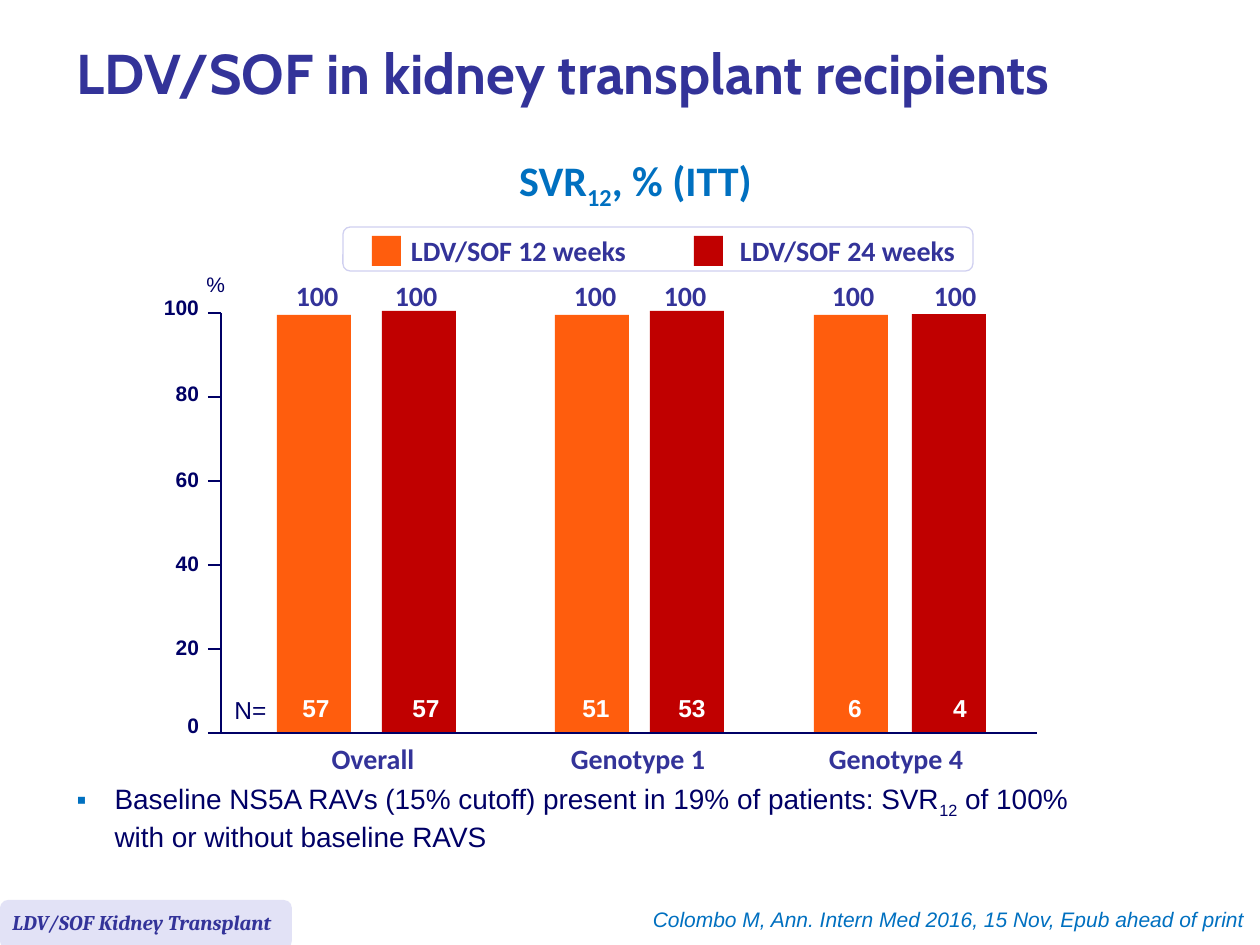
"""Build the slide on LDV/SOF response rates in kidney transplant recipients."""
import lxml.etree
import pptx
import pptx.dml.color
import pptx.enum.shapes
import pptx.enum.text
import pptx.oxml.ns
import pptx.util

COLORS = {
    "navy": "000066", "indigo": "333399", "blue": "0070C0", "white": "FFFFFF",
    "weeks12": "FF5D0D", "weeks24": "C00000", "tab": "E2E2F6", "frame": "D0D0F0",
}
TITLE = "LDV/SOF in kidney transplant recipients"
HEADING = ["SVR", "12", ", % (ITT)"]
FINDING = ["Baseline NS5A RAVs (15% cutoff) present in 19% of patients: SVR", "12", " of 100%"]
FINDING_END = "with or without baseline RAVS"
TAB = "LDV/SOF Kidney Transplant"
CITATION = "Colombo M, Ann. Intern Med 2016, 15 Nov, Epub ahead of print"
LEGEND = [("LDV/SOF 12 weeks", "weeks12", 372, 397), ("LDV/SOF 24 weeks", "weeks24", 694, 726)]
AXIS_LABELS = [("0", 713), ("20", 635), ("40", 551), ("60", 467), ("80", 381), ("100", 295)]
GROUPS = [("Overall", 373), ("Genotype 1", 638), ("Genotype 4", 896)]
# rate, patients, color, bar left, bar top, rate center, patients center
BARS = [
    ("100", "57", "weeks12", 277, 315, 317, 316),
    ("100", "57", "weeks24", 382, 311, 416, 426),
    ("100", "51", "weeks12", 555, 315, 595, 596),
    ("100", "53", "weeks24", 650, 311, 685, 692),
    ("100", "6", "weeks12", 814, 315, 853, 855),
    ("100", "4", "weeks24", 912, 314, 955, 960),
]
BASE, TICK_GAP, BAR_WIDTH = 733, 84, 74
AXIS, TICK_LEFT, AXIS_END = 221, 208, 1037

ALIGN = pptx.enum.text.PP_ALIGN
SHAPE = pptx.enum.shapes.MSO_SHAPE


def px(length):
    return pptx.util.Emu(round(length * 914400 / 126))


def rgb(name):
    return pptx.dml.color.RGBColor.from_string(COLORS[name])


def style(paragraph, size, font, color, bold=False, italic=False, align=ALIGN.LEFT):
    paragraph.alignment = align
    paragraph.font.size = pptx.util.Pt(size)
    paragraph.font.name = font
    paragraph.font.bold = bold
    paragraph.font.italic = italic
    paragraph.font.color.rgb = rgb(color)


def add_subscripted(paragraph, parts):
    for part, baseline in zip(parts, (None, "-25000", None)):
        run = paragraph.add_run()
        run.text = part
        if baseline:
            run.font._element.set("baseline", baseline)


def place(shape, box):
    shape.left, shape.top, shape.width, shape.height = map(px, box)


def add_label(slide, text, box, *look, inset=True, wrap=False, leading=None, **options):
    frame = slide.shapes.add_textbox(*map(px, box)).text_frame
    frame.word_wrap = wrap
    if not inset:
        frame.margin_left = frame.margin_right = frame.margin_top = frame.margin_bottom = 0
    paragraph = frame.paragraphs[0]
    if isinstance(text, list):
        add_subscripted(paragraph, text)
    else:
        paragraph.text = text
    if leading:
        paragraph.line_spacing = pptx.util.Pt(leading)
    style(paragraph, *look, **options)


def add_centered(slide, text, center, top, width, height, *look, **options):
    box = (center - width / 2, top, width, height)
    add_label(slide, text, box, *look, bold=True, align=ALIGN.CENTER, inset=False, **options)


def add_block(slide, kind, box, fill, line=None):
    block = slide.shapes.add_shape(kind, *map(px, box))
    block.shadow.inherit = False
    block.fill.solid()
    block.fill.fore_color.rgb = rgb(fill)
    if line:
        block.line.color.rgb = rgb(line)
        block.line.width = pptx.util.Pt(0.75)
    else:
        block.line.fill.background()


def add_line(slide, *ends):
    straight = pptx.enum.shapes.MSO_CONNECTOR.STRAIGHT
    line = slide.shapes.add_connector(straight, *map(px, ends))
    line.line.color.rgb = rgb("navy")
    line.line.width = pptx.util.Pt(1.5)
    lxml.etree.SubElement(line._element.spPr, pptx.oxml.ns.qn("a:effectLst"))


def add_title(slide):
    title = slide.shapes.title
    place(title, (64, 10, 1150, 135))
    title.text_frame.text = TITLE
    title.text_frame.vertical_anchor = pptx.enum.text.MSO_ANCHOR.MIDDLE
    title.text_frame.auto_size = pptx.enum.text.MSO_AUTO_SIZE.NONE
    title.text_frame.paragraphs[0].line_spacing = 0.85
    style(title.text_frame.paragraphs[0], 32, "Cabin", "indigo", bold=True)


def add_finding(slide):
    body = slide.placeholders[1]
    place(body, (64, 775, 1189, 105))
    body.text_frame.auto_size = pptx.enum.text.MSO_AUTO_SIZE.NONE
    paragraph = body.text_frame.paragraphs[0]
    add_subscripted(paragraph, FINDING)
    paragraph.add_line_break()
    paragraph.add_run().text = FINDING_END
    properties = paragraph._p.get_or_add_pPr()
    properties.set("marL", str(px(38)))
    properties.set("indent", str(px(-38)))
    qn = pptx.oxml.ns.qn
    bullet_color = lxml.etree.SubElement(properties, qn("a:buClr"))
    lxml.etree.SubElement(bullet_color, qn("a:srgbClr"), val=COLORS["blue"])
    lxml.etree.SubElement(properties, qn("a:buChar"), char="▪")
    paragraph.space_before = pptx.util.Pt(0)
    style(paragraph, 16, "Arial", "navy")


def add_legend(slide):
    add_block(slide, SHAPE.ROUNDED_RECTANGLE, (343, 227, 630, 44), "white", "frame")
    for name, color, swatch_left, name_left in LEGEND:
        add_block(slide, SHAPE.RECTANGLE, (swatch_left, 236, 29, 30), color)
        add_label(slide, name, (name_left, 227, 243, 47), 16, "Calibri", "indigo",
                  bold=True, align=ALIGN.CENTER)


def add_bars(slide):
    for rate, patients, color, left, top, rate_center, patients_center in BARS:
        add_block(slide, SHAPE.RECTANGLE, (left, top, BAR_WIDTH, BASE - top), color)
        add_centered(slide, rate, rate_center, 286, 43, 28, 16, "Calibri", "indigo", leading=15.2)
        add_centered(slide, patients, patients_center, 693, 28, 30, 14, "Arial", "white")
    for group, center in GROUPS:
        add_centered(slide, group, center, 742, 136, 34, 16, "Calibri", "indigo")
    add_label(slide, "N=", (222, 689, 77, 43), 14, "Arial", "navy", wrap=True)


def add_axes(slide):
    add_line(slide, AXIS, BASE - 5 * TICK_GAP, AXIS, BASE)
    add_line(slide, AXIS, BASE, AXIS_END, BASE)
    for step, (value, top) in enumerate(AXIS_LABELS):
        tick = BASE - step * TICK_GAP
        add_line(slide, TICK_LEFT, tick, AXIS, tick)
        add_label(slide, value, (164, top, 35, 25), 12, "Arial", "navy", bold=True,
                  align=ALIGN.RIGHT, inset=False)
    add_label(slide, "%", (194, 265, 44, 38), 12, "Arial", "navy")


def main():
    deck = pptx.Presentation()
    deck.slide_width, deck.slide_height = px(1260), px(945)
    slide = deck.slides.add_slide(deck.slide_layouts[1])
    add_title(slide)
    add_label(slide, HEADING, (504, 179, 263, 44), 24, "Calibri", "blue", bold=True,
              align=ALIGN.CENTER, leading=15.2)
    add_legend(slide)
    add_bars(slide)
    add_axes(slide)
    add_finding(slide)
    add_block(slide, SHAPE.ROUNDED_RECTANGLE, (0, 900, 292, 49), "tab")
    add_label(slide, TAB, (0, 903, 302, 38), 12, "Cambria", "indigo", wrap=True,
              bold=True, italic=True)
    add_label(slide, CITATION, (635, 900, 622, 38), 12, "Arial", "blue", italic=True,
              align=ALIGN.RIGHT)
    deck.save("out.pptx")


if __name__ == "__main__":
    main()
